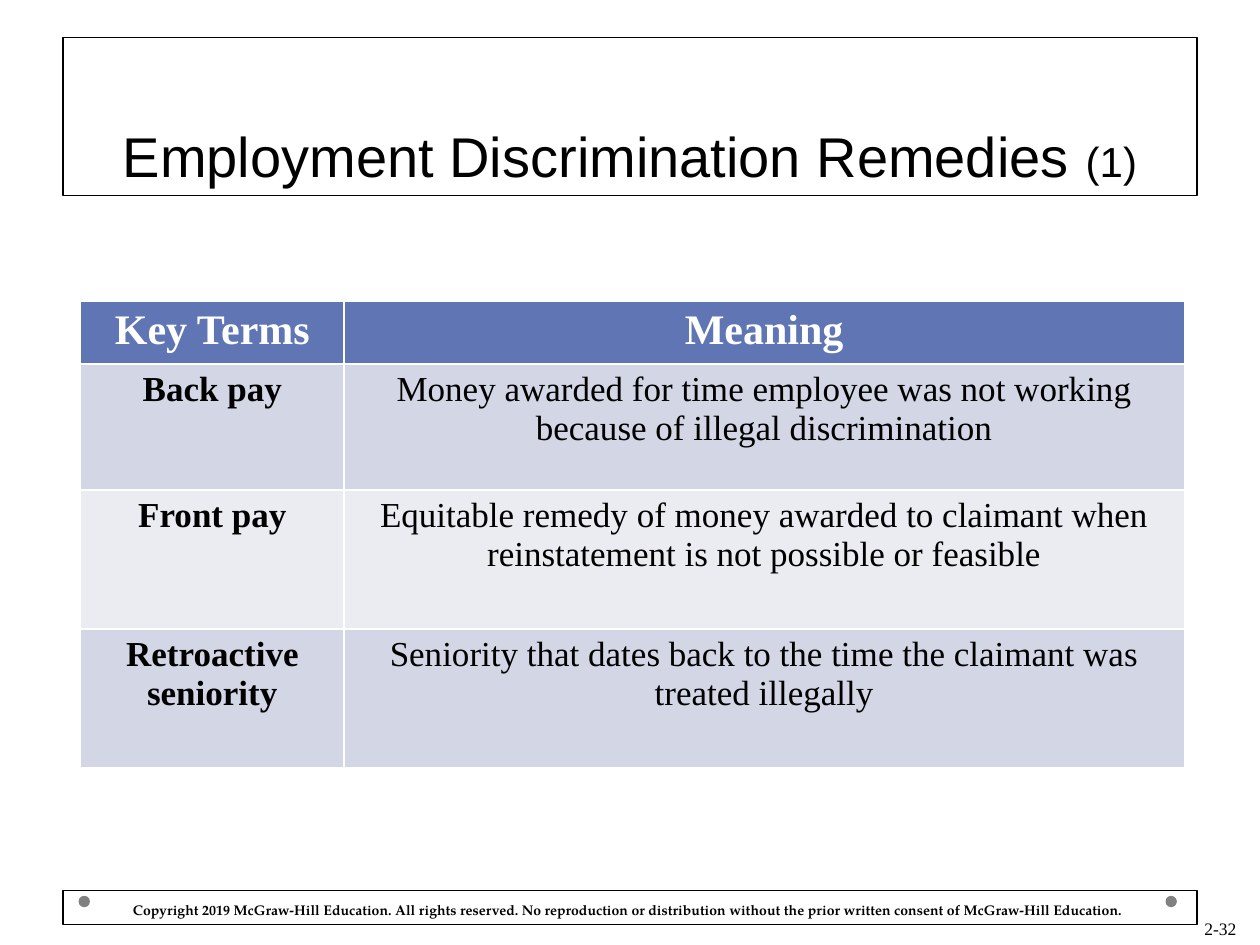
from typing import Any, NamedTuple

from pptx import Presentation
from pptx.dml.color import RGBColor
from pptx.enum.shapes import MSO_SHAPE
from pptx.enum.text import MSO_ANCHOR, MSO_AUTO_SIZE, PP_ALIGN
from pptx.util import Pt

BLACK = RGBColor(0, 0, 0)
WHITE = RGBColor(255, 255, 255)
GRAY = RGBColor(0x80, 0x80, 0x80)
BLUE = RGBColor(0x60, 0x76, 0xB4)
BAND = RGBColor(0xD2, 0xD6, 0xE5)
PALE = RGBColor(0xEA, 0xEC, 0xF2)
SERIF = "Times New Roman"


class Box(NamedTuple):
    left: float
    top: float
    width: float
    height: float

    def pts(self) -> list[Pt]:
        return [Pt(side) for side in self]


class Row(NamedTuple):
    term: str
    meaning: str
    height: float
    fill: RGBColor
    size: int = 20
    color: RGBColor = BLACK
    head: bool = False


DOTS = [Box(left, 511.9, 6.5, 6.5) for left in (44.9, 666)]
WIDTHS = (150.5, 480.2)
ROWS = [
    Row("Key Terms", "Meaning", 36, BLUE, 24, WHITE, True),
    Row("Back pay", "Money awarded for time employee was not working "
        "because of illegal discrimination", 72, BAND),
    Row("Front pay", "Equitable remedy of money awarded to claimant when "
        "reinstatement is not possible or feasible", 79.2, PALE),
    Row("Retroactive seniority", "Seniority that dates back to the time "
        "the claimant was treated illegally", 79.6, BAND),
]


def write(para: Any, text: str, name: str, size: float,
          color: RGBColor = BLACK, bold: bool = False) -> None:
    run = para.add_run()
    run.text = text
    run.font.color.rgb = color
    look = {"name": name, "size": Pt(size), "bold": bold}
    for key, value in look.items():
        setattr(run.font, key, value)


def frame(shape: Any) -> None:
    """Give the shape a thin black outline and no fill."""
    shape.fill.background()
    shape.line.color.rgb = BLACK
    shape.line.width = Pt(0.75)


def add_dot(slide: Any, box: Box) -> None:
    dot = slide.shapes.add_shape(MSO_SHAPE.OVAL, *box.pts())
    dot.shadow.inherit = False
    dot.fill.solid()
    dot.fill.fore_color.rgb = GRAY
    dot.line.fill.background()


def add_page(slide: Any) -> None:
    box = slide.shapes.add_textbox(*Box(545.8, 504, 167.8, 36).pts())
    text = box.text_frame
    text.word_wrap = True
    text.vertical_anchor = MSO_ANCHOR.BOTTOM
    para = text.paragraphs[0]
    para.alignment = PP_ALIGN.RIGHT
    write(para, "2-32", SERIF, 10)


def set_title(slide: Any) -> None:
    title = slide.shapes.title
    place = Box(36, 21.6, 648, 90)._asdict()
    for key, value in place.items():
        setattr(title, key, Pt(value))
    frame(title)
    text = title.text_frame
    text.auto_size = MSO_AUTO_SIZE.NONE
    text.vertical_anchor = MSO_ANCHOR.BOTTOM
    para = text.paragraphs[0]
    para.alignment = PP_ALIGN.CENTER
    para.line_spacing = Pt(58)
    write(para, "Employment Discrimination Remedies ", "Arial", 32)
    write(para, "(1)", "Arial", 24)


def add_terms(slide: Any) -> None:
    place = Box(46.1, 172.1, sum(WIDTHS), sum(row.height for row in ROWS))
    table = slide.shapes.add_table(len(ROWS), 2, *place.pts()).table
    for col, width in zip(table.columns, WIDTHS):
        col.width = Pt(width)
    for line, row in zip(table.rows, ROWS):
        line.height = Pt(row.height)
        pairs = ((row.term, True), (row.meaning, row.head))
        for cell, (text, bold) in zip(line.cells, pairs):
            cell.fill.solid()
            cell.fill.fore_color.rgb = row.fill
            para = cell.text_frame.paragraphs[0]
            para.alignment = PP_ALIGN.CENTER
            write(para, text, SERIF, row.size, row.color, bold)


def add_rights(slide: Any) -> None:
    box = slide.shapes.add_shape(MSO_SHAPE.RECTANGLE,
                                 *Box(36, 509, 648, 19.4).pts())
    box.shadow.inherit = False
    frame(box)
    text = box.text_frame
    text.word_wrap = True
    text.margin_left = Pt(40)
    text.vertical_anchor = MSO_ANCHOR.BOTTOM
    para = text.paragraphs[0]
    para.alignment = PP_ALIGN.LEFT
    write(para, "Copyright 2019 McGraw-Hill Education. All rights reserved. "
          "No reproduction or distribution without the prior written consent "
          "of McGraw-Hill Education.", "TeX Gyre Pagella", 8, bold=True)


def main() -> None:
    deck = Presentation()
    deck.slide_width, deck.slide_height = Pt(720), Pt(540)
    slide = deck.slides.add_slide(deck.slide_layouts[5])
    for dot in DOTS:
        add_dot(slide, dot)
    add_page(slide)
    set_title(slide)
    add_terms(slide)
    add_rights(slide)
    deck.save("out.pptx")


if __name__ == "__main__":
    main()
